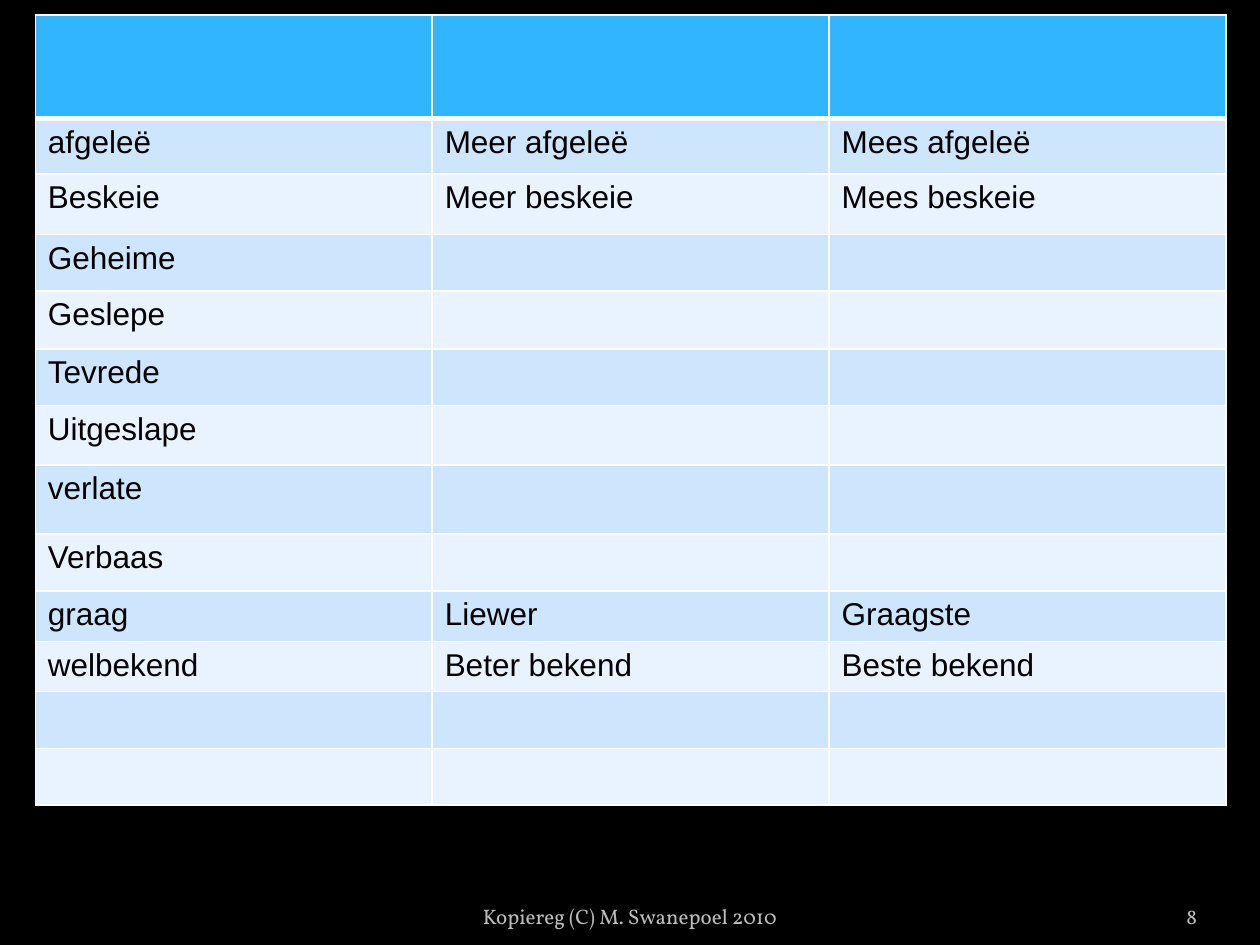
from lxml import etree
from pptx import Presentation
from pptx.dml.color import RGBColor
from pptx.enum.text import MSO_ANCHOR, PP_ALIGN
from pptx.oxml.ns import qn
from pptx.util import Inches, Pt

CENTER, RIGHT = PP_ALIGN.CENTER, PP_ALIGN.RIGHT
BOTTOM = MSO_ANCHOR.BOTTOM
WIDTH, HEIGHT = 10, 7.5
COLORS = {
    "background": "000000",
    "header": "31B6FD",
    "odd": "CEE5FE",
    "even": "E8F3FF",
    "border": "FFFFFF",
    "text": "000000",
    "footer": "BDBDBD",
}
DEGREES = [
    [],
    ["afgeleë", "Meer afgeleë", "Mees afgeleë"],
    ["Beskeie", "Meer beskeie", "Mees beskeie"],
    ["Geheime"],
    ["Geslepe"],
    ["Tevrede"],
    ["Uitgeslape"],
    ["verlate"],
    ["Verbaas"],
    ["graag", "Liewer", "Graagste"],
    ["welbekend", "Beter bekend", "Beste bekend"],
    [],
    [],
]
ROW_HEIGHTS = [0.82, 0.44, 0.48, 0.45, 0.46, 0.45, 0.47, 0.55, 0.45, 0.38, 0.38, 0.45, 0.45]


def rgb(name):
    return RGBColor.from_string(COLORS[name])


class SlideBuilder:
    def __init__(self, deck):
        self.page = deck.slides.add_slide(deck.slide_layouts[6])
        fill = self.page.background.fill
        fill.solid()
        fill.fore_color.rgb = rgb("background")

    def style(self, paragraph, font, size, color):
        paragraph.font.name = font
        paragraph.font.size = Pt(size)
        paragraph.font.color.rgb = rgb(color)

    def footer(self, text, left, width, align, side_margin):
        box = self.page.shapes.add_textbox(
            Inches(left * WIDTH), Inches(0.936 * HEIGHT), Inches(width * WIDTH), Inches(0.4))
        frame = box.text_frame
        frame.word_wrap = True
        frame.vertical_anchor = BOTTOM
        frame.margin_left = frame.margin_right = Inches(side_margin)
        paragraph = frame.paragraphs[0]
        paragraph.text = text
        paragraph.alignment = align
        self.style(paragraph, "Vollkorn", 12, "footer")

    def borders(self, cell, top, bottom):
        properties = cell._tc.get_or_add_tcPr()
        sides = {"lnL": 1, "lnR": 1, "lnT": top, "lnB": bottom}
        for position, (side, points) in enumerate(sides.items()):
            line = etree.Element(qn(f"a:{side}"), w=str(Pt(points)))
            fill = etree.SubElement(line, qn("a:solidFill"))
            etree.SubElement(fill, qn("a:srgbClr"), val=COLORS["border"])
            properties.insert(position, line)

    def table(self, rows, heights, left, top, columns, column_width):
        table = self.page.shapes.add_table(
            len(rows), columns, Inches(left), Inches(top),
            Inches(columns * column_width), Inches(sum(heights))).table
        table.horz_banding = False
        for row_index, (words, height) in enumerate(zip(rows, heights)):
            table.rows[row_index].height = Inches(height)
            band = "header" if row_index == 0 else ("even", "odd")[row_index % 2]
            for column in range(columns):
                cell = table.cell(row_index, column)
                cell.fill.solid()
                cell.fill.fore_color.rgb = rgb(band)
                self.borders(cell, 3 if row_index == 1 else 1, 3 if row_index == 0 else 1)
                paragraph = cell.text_frame.paragraphs[0]
                if column < len(words):
                    paragraph.text = words[column]
                self.style(paragraph, "Arial", 18, "text")


def main():
    deck = Presentation()
    deck.slide_width, deck.slide_height = Inches(WIDTH), Inches(HEIGHT)
    builder = SlideBuilder(deck)
    builder.footer("Kopiereg (C) M. Swanepoel 2010", 0.34, 0.32, CENTER, 0.1)
    builder.footer("8", 0.87, 0.08, RIGHT, 0)
    builder.table(DEGREES, ROW_HEIGHTS, left=0.28, top=0.12, columns=3, column_width=3.15)
    deck.save("out.pptx")


if __name__ == "__main__":
    main()
